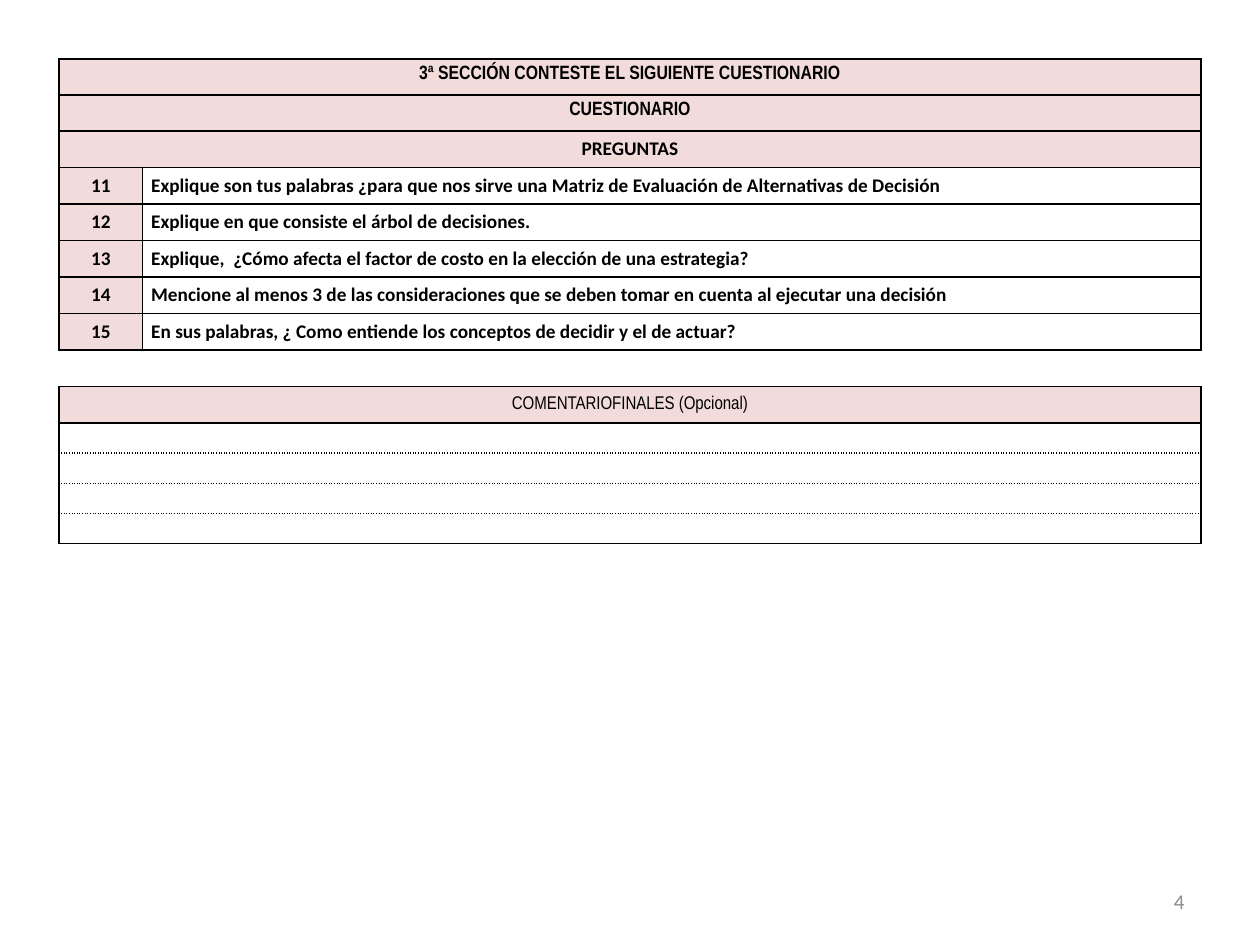
from lxml import etree
from pptx import Presentation
from pptx.dml.color import RGBColor
from pptx.enum.text import MSO_ANCHOR, PP_ALIGN
from pptx.oxml.ns import qn
from pptx.util import Inches, Pt

CENTER, RIGHT, JUSTIFY = PP_ALIGN.CENTER, PP_ALIGN.RIGHT, PP_ALIGN.JUSTIFY
TOP, MIDDLE = MSO_ANCHOR.TOP, MSO_ANCHOR.MIDDLE
COLUMNS, ROWS = 100, 75
BLANK_LAYOUT = 6

HEADINGS = [
    ("3ª SECCIÓN CONTESTE EL SIGUIENTE CUESTIONARIO", "Arial Narrow", TOP),
    ("CUESTIONARIO", "Arial Narrow", TOP),
    ("PREGUNTAS", "Calibri", MIDDLE),
]
FIRST_NUMBER = 11
QUESTIONS = [
    "Explique son tus palabras ¿para que nos sirve una Matriz de Evaluación de Alternativas de Decisión",
    "Explique en que consiste el árbol de decisiones.",
    "Explique,  ¿Cómo afecta el factor de costo en la elección de una estrategia?",
    "Mencione al menos 3 de las consideraciones que se deben tomar en cuenta al ejecutar una decisión",
    "En sus palabras, ¿ Como entiende los conceptos de decidir y el de actuar?",
]
COMMENT_LINES = 4
ROW_HEIGHTS = [2.7] * 2 + [2.9] * 8 + [2.4] * COMMENT_LINES


def color(hex_string):
    return RGBColor.from_string(hex_string)


def write(frame, text, size=11, font="Calibri", ink="000000", bold=True, align=CENTER):
    paragraph = frame.paragraphs[0]
    paragraph.alignment = align
    run = paragraph.add_run()
    run.text = text
    run.font.size = Pt(size)
    run.font.name = font
    run.font.bold = bold
    run.font.color.rgb = color(ink)


class Sheet:
    """Holds the style and the current slide; lengths are in grid columns and rows."""

    pink, white, black, gray = "F2DCDB", "FFFFFF", "000000", "8C8C8C"

    def __init__(self, presentation):
        self.slide = presentation.slides.add_slide(presentation.slide_layouts[BLANK_LAYOUT])
        self.column = presentation.slide_width / COLUMNS
        self.row = presentation.slide_height / ROWS

    def box(self, left, top, width, height):
        return (round(left * self.column), round(top * self.row),
                round(width * self.column), round(height * self.row))

    def text(self, text, left, top, width, height, **style):
        frame = self.slide.shapes.add_textbox(*self.box(left, top, width, height)).text_frame
        frame.word_wrap = True
        frame.vertical_anchor = MIDDLE
        write(frame, text, **style)

    def table(self, left, top, widths, heights):
        frame = self.slide.shapes.add_table(
            len(heights), len(widths), *self.box(left, top, sum(widths), sum(heights)))
        table = frame.table
        table.first_row = table.horz_banding = False
        for column, width in zip(table.columns, widths):
            column.width = round(width * self.column)
        for row, height in zip(table.rows, heights):
            row.height = round(height * self.row)
        return table

    def cell(self, cell, text="", fill=white, anchor=MIDDLE, margins=(0.1, 0.05),
             borders=None, **style):
        cell.fill.solid()
        cell.fill.fore_color.rgb = color(fill)
        cell.vertical_anchor = anchor
        cell.margin_left = cell.margin_right = Inches(margins[0])
        cell.margin_top = cell.margin_bottom = Inches(margins[1])
        self.borders(cell, borders or {})
        if text:
            write(cell.text_frame, text, **style)
        else:
            # A small end mark keeps an empty row from growing.
            etree.SubElement(cell.text_frame.paragraphs[0]._p, qn("a:endParaRPr"), sz="800")

    def full_row(self, table, row, text="", **style):
        first, last = table.cell(row, 0), table.cell(row, 1)
        first.merge(last)
        self.cell(first, text, **style)
        self.borders(last, style.get("borders") or {})

    def borders(self, cell, dashes):
        """Draw each side solid unless dashes gives another dash, or None for no line."""
        properties = cell._tc.get_or_add_tcPr()
        for position, side in enumerate("LRTB"):
            line = etree.Element(qn(f"a:ln{side}"), w=str(Pt(1)))
            dash = dashes.get(side, "solid")
            if dash:
                fill = etree.SubElement(line, qn("a:solidFill"))
                etree.SubElement(fill, qn("a:srgbClr"), val=self.black)
                etree.SubElement(line, qn("a:prstDash"), val=dash)
            else:
                etree.SubElement(line, qn("a:noFill"))
            properties.insert(position, line)


def main():
    presentation = Presentation()
    presentation.slide_width = Inches(10)
    presentation.slide_height = Inches(7.5)
    sheet = Sheet(presentation)
    sheet.text("4", 71.7, 69.5, 23.3, 4, size=12, ink=sheet.gray, bold=False, align=RIGHT)

    table = sheet.table(4.7, 4.7, [6.6, 84], ROW_HEIGHTS)
    for row, (heading, font, anchor) in enumerate(HEADINGS):
        sheet.full_row(table, row, heading, fill=sheet.pink, font=font, anchor=anchor)

    for index, question in enumerate(QUESTIONS):
        row = len(HEADINGS) + index
        sheet.cell(table.cell(row, 0), str(FIRST_NUMBER + index), fill=sheet.pink)
        sheet.cell(table.cell(row, 1), question, margins=(0.07, 0.04), align=JUSTIFY)

    gap = len(HEADINGS) + len(QUESTIONS)
    sheet.full_row(table, gap, borders={"L": None, "R": None})
    sheet.full_row(table, gap + 1, "COMENTARIOFINALES (Opcional)", fill=sheet.pink,
                   size=10.5, font="Arial Narrow", bold=False)
    for line in range(COMMENT_LINES):
        dotted = {}
        if line > 0:
            dotted["T"] = "sysDot"
        if line < COMMENT_LINES - 1:
            dotted["B"] = "sysDot"
        sheet.full_row(table, gap + 2 + line, borders=dotted)

    presentation.save("out.pptx")


if __name__ == "__main__":
    main()
